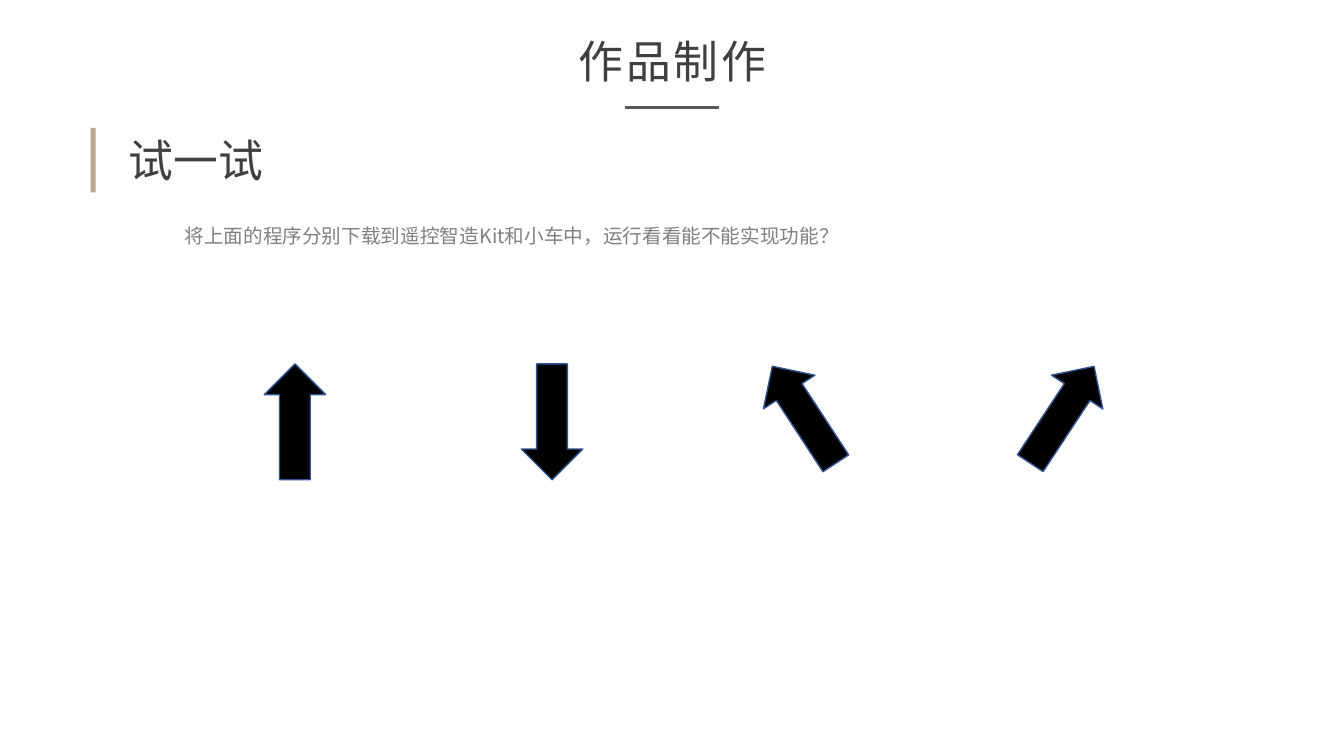
from lxml import etree
from pptx import Presentation
from pptx.dml.color import RGBColor
from pptx.enum.shapes import MSO_CONNECTOR, MSO_SHAPE
from pptx.enum.text import MSO_ANCHOR, MSO_AUTO_SIZE, PP_ALIGN
from pptx.oxml.ns import qn
from pptx.util import Inches, Pt

FONT = "Noto Sans CJK SC"
DARK = RGBColor(0x40, 0x40, 0x40)
GRAY = RGBColor(0x80, 0x80, 0x80)
RULE = RGBColor(0x59, 0x59, 0x59)
TAN = RGBColor(0xBC, 0xA8, 0x90)
BLACK = RGBColor(0, 0, 0)
BLUE = RGBColor(0x32, 0x54, 0x91)
RECT, ARROW = MSO_SHAPE.RECTANGLE, MSO_SHAPE.RIGHT_ARROW
LINE = MSO_CONNECTOR.STRAIGHT
CENTER, LEFT = PP_ALIGN.CENTER, PP_ALIGN.LEFT
TOP, MIDDLE = MSO_ANCHOR.TOP, MSO_ANCHOR.MIDDLE
FIT = MSO_AUTO_SIZE.SHAPE_TO_FIT_TEXT


def place(shape, *area):
    shape.left, shape.top, shape.width, shape.height = map(Inches, area)


def write(shape, text, size, color, align=LEFT, anchor=TOP, wrap=True):
    """Fill a one-paragraph frame and return its paragraph and run."""
    frame = shape.text_frame
    frame.text = text
    frame.word_wrap = wrap
    frame.auto_size = FIT
    frame.vertical_anchor = anchor
    para = frame.paragraphs[0]
    para.alignment = align
    para.space_before = Pt(0)
    run = para.runs[0]
    run.font.size = Pt(size)
    run.font.name = FONT
    run.font.color.rgb = color
    etree.SubElement(run.font._element, qn("a:ea"), typeface=FONT)
    return para, run


deck = Presentation()
deck.slide_width, deck.slide_height = Inches(13.33), Inches(7.5)
slide = deck.slides.add_slide(deck.slide_layouts[1])
shapes = slide.shapes

# Title and its rule
title = shapes.title
place(title, 4.79, 0.3, 3.76, 0.61)
para, run = write(title, "作品制作", 32, DARK, CENTER, MIDDLE)
run.font._element.set("spc", "220")
rule = shapes.add_connector(LINE, Inches(6.2), Inches(1.07), Inches(7.13), Inches(1.07))
rule.line.color.rgb = RULE
rule.line.width = Pt(2.25)
etree.SubElement(rule._element.spPr, qn("a:effectLst"))

# Section heading with side bar
bar = shapes.add_shape(RECT, 0, 0, 0, 0)
place(bar, 0.9, 1.27, 0.05, 0.64)
bar.shadow.inherit = False
bar.fill.solid()
bar.fill.fore_color.rgb = TAN
bar.line.fill.background()
head = shapes.add_textbox(0, 0, 0, 0)
place(head, 1.18, 1.27, 1.55, 0.64)
write(head, "试一试", 32, DARK, wrap=False)

# Task
task = slide.placeholders[1]
place(task, 1.73, 2.05, 10.02, 0.41)
para, run = write(task, "将上面的程序分别下载到遥控智造Kit和小车中，运行看看能不能实现功能？", 14, GRAY)
para.line_spacing = 1.5
props = para._p.get_or_add_pPr()
props.set("marL", "0")
props.set("indent", "0")
etree.SubElement(props, qn("a:buNone"))

# Direction arrows: left, top, turn
for left, top, turn in [
    (2.35, 3.88, 270),
    (4.9, 3.88, 90),
    (7.4, 3.81, 236.8),
    (9.96, 3.81, 303.4),
]:
    arrow = shapes.add_shape(ARROW, 0, 0, 0, 0)
    place(arrow, left, top, 1.15, 0.61)
    arrow.rotation = turn
    arrow.shadow.inherit = False
    arrow.fill.solid()
    arrow.fill.fore_color.rgb = BLACK
    arrow.line.color.rgb = BLUE
    arrow.line.width = Pt(1)

deck.save("out.pptx")
